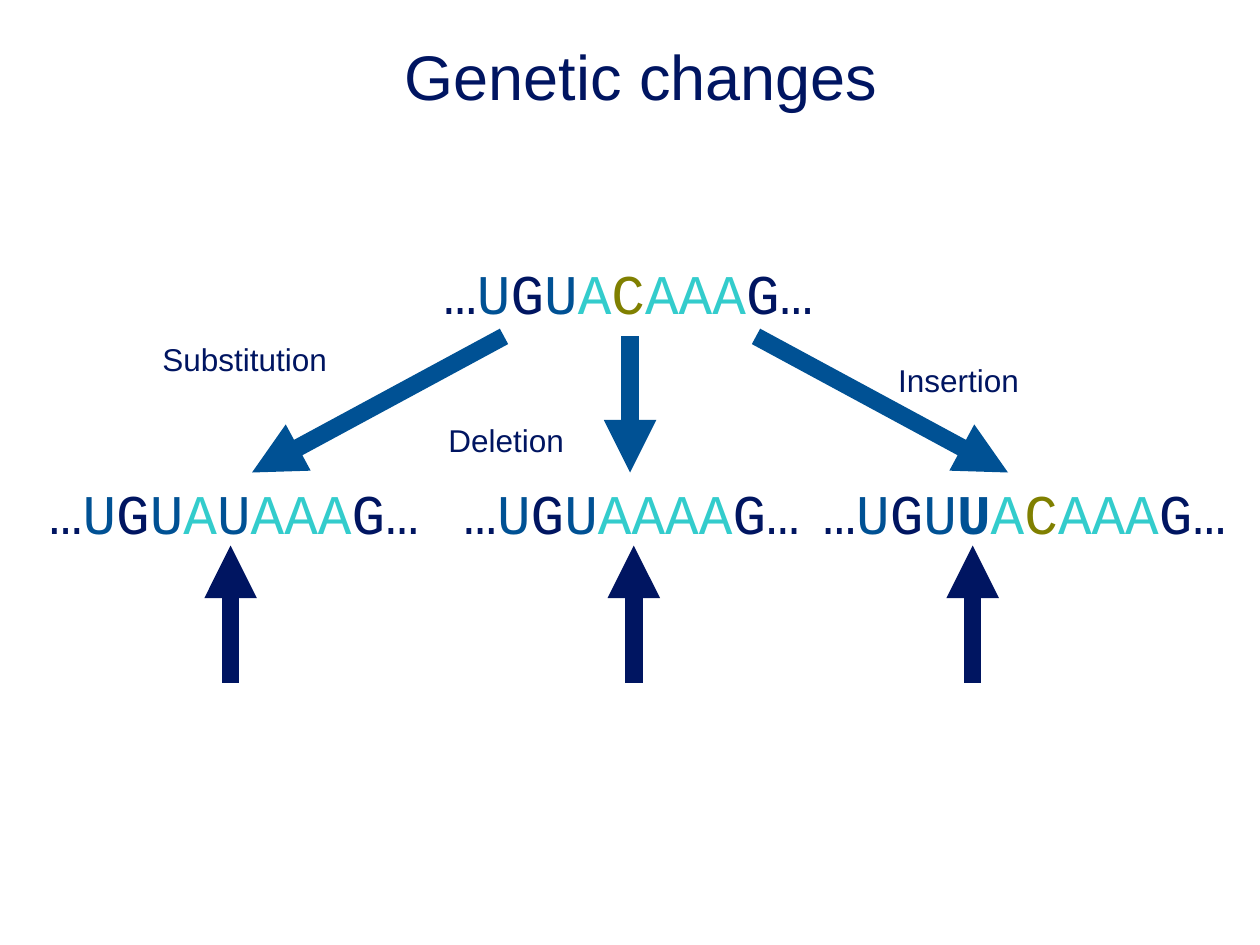
from itertools import groupby
from lxml.etree import SubElement
from pptx import Presentation
from pptx.dml.color import RGBColor
from pptx.enum.shapes import MSO_CONNECTOR
from pptx.enum.text import PP_ALIGN
from pptx.oxml.ns import qn
from pptx.util import Inches, Pt

COLS, ROWS = 10, 7.5
NAVY, BLUE, TEAL, GOLD = "001561", "005194", "33CCCC", "808000"
BASES = {"U": BLUE, "A": TEAL, "C": GOLD}


def color(code):
    """Turn a hex string into a colour."""
    return RGBColor.from_string(code)


def style(run, font, size, code, bold=None):
    """Set the font, size, colour and weight of a run."""
    run.font.name = font
    run.font.size = Pt(size)
    run.font.color.rgb = color(code)
    run.font.bold = bold


def first(shapes, box):
    """Add a text box in grid units and return its first paragraph."""
    text = shapes.add_textbox(*(Inches(n) for n in box)).text_frame
    text.word_wrap = True
    return text.paragraphs[0]


def label(shapes, box, words, size, align=PP_ALIGN.LEFT):
    """Write one line of plain text in the box."""
    para = first(shapes, box)
    para.text = words
    para.alignment = align
    style(para.runs[0], "Arial", size, NAVY)


def strand(shapes, left, top, bases, bold=None):
    """Write a base sequence, coloured by base, with one base bold if asked."""
    text = f"…{bases}…"
    wide = len(text) * 0.8 / 3 + 0.25
    para = first(shapes, (left, top, wide, 0.63))
    marks = ((base, BASES.get(base, NAVY), spot == bold)
             for spot, base in enumerate(text))
    for (code, heavy), part in groupby(marks, lambda mark: mark[1:]):
        run = para.add_run()
        run.text = "".join(mark[0] for mark in part)
        style(run, "Courier New", 32, code, heavy)


def arrow(shapes, start, end, code):
    """Draw a thick arrow between two grid points."""
    ends = (Inches(n) for n in (*start, *end))
    line = shapes.add_connector(MSO_CONNECTOR.STRAIGHT, *ends)
    line.line.width = Pt(10)
    line.line.color.rgb = color(code)
    props = line.element.spPr
    SubElement(props.find(qn("a:ln")), qn("a:tailEnd"), type="triangle")
    SubElement(props, qn("a:effectLst"))


def branch(shapes, box, bases, name, spot, source, target, mark, bold=None):
    """Group one change: its label, arrow, new strand and site marker."""
    left, top, high = box
    parts = shapes.add_group_shape().shapes
    row = top + 1.08
    strand(parts, left, row, bases, bold)
    arrow(parts, (source, top), (target, row), BLUE)
    arrow(parts, (left + mark, top + high), (left + mark, row + 0.58), NAVY)
    across, down, wide = spot
    label(parts, (left + across, top + down, wide, 0.57), name, 18)


def build():
    """Build the slide and save it."""
    deck = Presentation()
    deck.slide_width, deck.slide_height = Inches(COLS), Inches(ROWS)
    shapes = deck.slides.add_slide(deck.slide_layouts[6]).shapes
    label(shapes, (1.08, 0.25, 8.02, 0.8), "Genetic changes", 36, PP_ALIGN.CENTER)
    strand(shapes, 3.42, 2, "UGUACAAAG")
    top, high, mid = 2.67, 2.75, COLS / 2
    changes = [
        (0.29, "UGUAUAAAG", "Substitution", (0.9, -0.02, 2.15), -1, 1.54, None),
        (6.43, "UGUUACAAAG", "Insertion", (0.6, 0.15, 1.66), 1, 1.29, 4),
        (3.58, "UGUAAAAG", "Deletion", (-0.12, 0.62, 1.5), 0, 1.45, None),
    ]
    for left, bases, name, spot, side, mark, bold in changes:
        box = left, top, high
        branch(shapes, box, bases, name, spot, mid + side, mid + 3 * side, mark, bold)
    deck.save("out.pptx")


if __name__ == "__main__":
    build()
